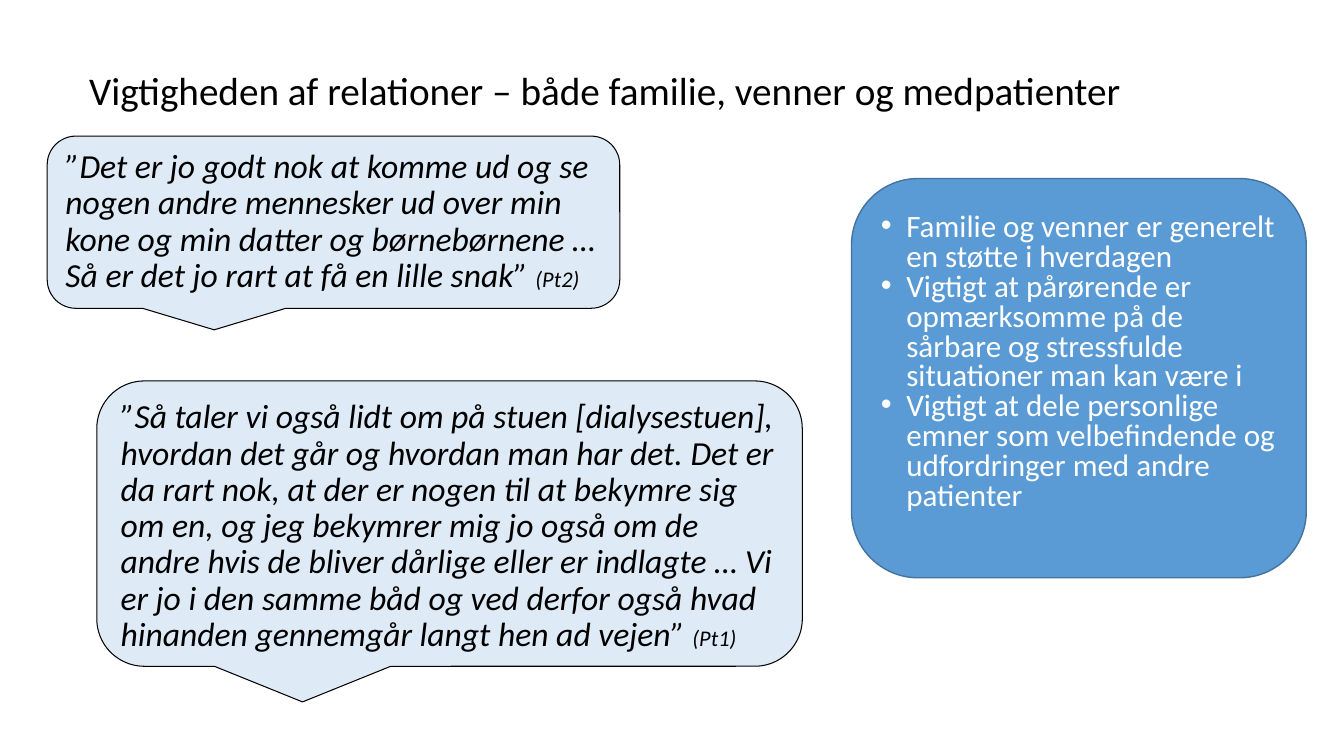
"""Build the slide on why relations matter to patients."""
from lxml.etree import SubElement
from pptx import Presentation
from pptx.dml.color import RGBColor
from pptx.enum.shapes import MSO_SHAPE
from pptx.enum.text import MSO_ANCHOR, PP_ALIGN
from pptx.oxml.ns import qn
from pptx.util import Cm, Pt

BLACK = RGBColor(0x00, 0x00, 0x00)
WHITE = RGBColor(0xFF, 0xFF, 0xFF)
PALE_BLUE = RGBColor(0xDE, 0xEB, 0xF7)
BLUE = RGBColor(0x5B, 0x9B, 0xD5)
DARK_BLUE = RGBColor(0x43, 0x73, 0x9E)

HEADING = "Vigtigheden af relationer – både familie, venner og medpatienter"
QUOTES = [
    ((1.19, 3.43, 14.43, 4.34),
     "”Det er jo godt nok at komme ud og se nogen andre mennesker ud over min "
     "kone og min datter og børnebørnene … Så er det jo rart at få en lille snak” ",
     "(Pt2)"),
    ((2.44, 9.6, 17.78, 7.19),
     "”Så taler vi også lidt om på stuen [dialysestuen], hvordan det går og "
     "hvordan man har det. Det er da rart nok, at der er nogen til at bekymre sig "
     "om en, og jeg bekymrer mig jo også om de andre hvis de bliver dårlige eller "
     "er indlagte … Vi er jo i den samme båd og ved derfor også hvad hinanden "
     "gennemgår langt hen ad vejen” ",
     "(Pt1)"),
]
FINDINGS = [
    "Familie og venner er generelt en støtte i hverdagen",
    "Vigtigt at pårørende er opmærksomme på de sårbare og stressfulde "
    "situationer man kan være i",
    "Vigtigt at dele personlige emner som velbefindende og udfordringer med "
    "andre patienter",
]


def apply(target, values):
    for name, value in values.items():
        setattr(target, name, value)


class RelationsSlide:
    font = "Calibri"
    heading_format = {"size": Pt(28)}
    quote_format = {"size": Pt(24), "italic": True}
    speaker_format = {"size": Pt(16), "italic": True}
    finding_format = {"size": Pt(22.2)}
    quote_spacing = {"line_spacing": 0.9, "space_before": Pt(10)}
    bullet_indent = Cm(0.64)

    def __init__(self, deck):
        self.slide = deck.slides.add_slide(deck.slide_layouts[6])

    def wording(self, paragraph, pieces, color, spacing):
        apply(paragraph, {"alignment": PP_ALIGN.LEFT, **spacing})
        for words, font_format in pieces:
            run = paragraph.add_run()
            run.text = words
            apply(run.font, {"name": self.font, **font_format})
            run.font.color.rgb = color

    def panel(self, preset, place, fill, outline, width):
        panel = self.slide.shapes.add_shape(preset, *map(Cm, place))
        panel.shadow.inherit = False
        panel.fill.solid()
        panel.fill.fore_color.rgb = fill
        panel.line.color.rgb = outline
        panel.line.width = Pt(width)
        return panel.text_frame

    def heading(self, place, words):
        frame = self.slide.shapes.add_textbox(*map(Cm, place)).text_frame
        apply(frame, {"word_wrap": True, "vertical_anchor": MSO_ANCHOR.MIDDLE})
        self.wording(frame.paragraphs[0], [(words, self.heading_format)],
                     BLACK, {"line_spacing": 0.9})

    def quote(self, place, words, speaker):
        frame = self.panel(MSO_SHAPE.ROUNDED_RECTANGULAR_CALLOUT, place,
                           PALE_BLUE, BLACK, 0.75)
        apply(frame, {"word_wrap": True, "vertical_anchor": MSO_ANCHOR.TOP})
        pieces = [(words, self.quote_format), (speaker, self.speaker_format)]
        self.wording(frame.paragraphs[0], pieces, BLACK, self.quote_spacing)

    def findings(self, place, findings):
        frame = self.panel(MSO_SHAPE.ROUNDED_RECTANGLE, place, BLUE, DARK_BLUE, 1)
        apply(frame, {"word_wrap": True, "vertical_anchor": MSO_ANCHOR.MIDDLE,
                      "margin_right": Cm(0.2), "margin_bottom": Cm(0.89)})
        for index, finding in enumerate(findings):
            paragraph = frame.add_paragraph() if index else frame.paragraphs[0]
            self.wording(paragraph, [(finding, self.finding_format)],
                         WHITE, {"line_spacing": 0.8})
            self.bullet(paragraph)

    def bullet(self, paragraph):
        properties = paragraph._p.get_or_add_pPr()
        properties.set("marL", str(self.bullet_indent))
        properties.set("indent", str(-self.bullet_indent))
        SubElement(properties, qn("a:buFont")).set("typeface", "Arial")
        SubElement(properties, qn("a:buChar")).set("char", "•")


def main():
    deck = Presentation()
    apply(deck, {"slide_width": Cm(33.87), "slide_height": Cm(19.05)})
    relations = RelationsSlide(deck)
    relations.heading((2, 0.74, 30.48, 3.18), HEADING)
    for place, words, speaker in QUOTES:
        relations.quote(place, words, speaker)
    relations.findings((21.46, 4.5, 11.46, 10.06), FINDINGS)
    deck.save("out.pptx")


if __name__ == "__main__":
    main()
